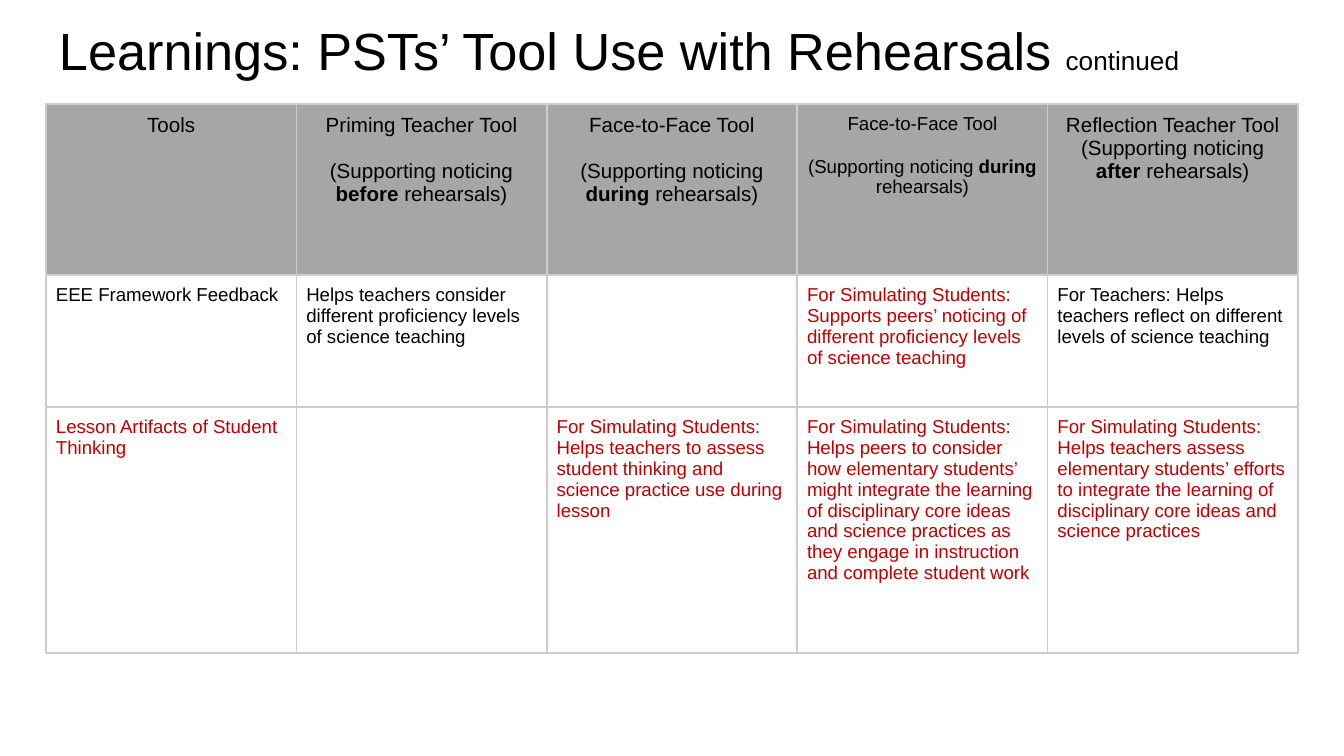
from dataclasses import dataclass

from lxml.etree import SubElement
from pptx import Presentation
from pptx.dml.color import RGBColor
from pptx.enum.text import MSO_ANCHOR, MSO_AUTO_SIZE, PP_ALIGN
from pptx.oxml.ns import qn
from pptx.util import Pt

SCALE = 914400 / 134.4
BLACK = RGBColor(0x00, 0x00, 0x00)
RED = RGBColor(0xC0, 0x00, 0x00)
GRAY = RGBColor(0xA6, 0xA6, 0xA6)
RULE = RGBColor(0xCC, 0xCC, 0xCC)
FONT = "Arial"
LEFT, WIDTH = 46, 1252
ROWS = (171, 132, 246)
PAD = 10


@dataclass
class Head:
    label: str
    when: str = ""
    size: int = 11
    gap: bool = True


@dataclass
class Note:
    text: str = ""
    color: RGBColor = RED


HEADS = [
    Head("Tools"),
    Head("Priming Teacher Tool", "before"),
    Head("Face-to-Face Tool", "during"),
    Head("Face-to-Face Tool", "during", size=10),
    Head("Reflection Teacher Tool", "after", gap=False),
]
NOTES = [
    [
        Note("EEE Framework Feedback", BLACK),
        Note("Helps teachers consider different proficiency levels of science teaching", BLACK),
        Note(),
        Note("For Simulating Students: Supports peers’ noticing of different "
             "proficiency levels of science teaching"),
        Note("For Teachers: Helps teachers reflect on different levels of science teaching", BLACK),
    ],
    [
        Note("Lesson Artifacts of Student Thinking"),
        Note(),
        Note("For Simulating Students: Helps teachers to assess student thinking "
             "and science practice use during lesson"),
        Note("For Simulating Students: Helps peers to consider how elementary students’ "
             "might integrate the learning of disciplinary core ideas and science practices "
             "as they engage in instruction and complete student work"),
        Note("For Simulating Students: Helps teachers assess elementary students’ efforts "
             "to integrate the learning of disciplinary core ideas and science practices"),
    ],
]


def px(n: int) -> int:
    return round(n * SCALE)


def style(para, size: int, color: RGBColor = BLACK, align=PP_ALIGN.LEFT) -> None:
    para.alignment = align
    para.font.name = FONT
    para.font.size = Pt(size)
    para.font.color.rgb = color


def frame(cell) -> None:
    """Set the cell's margins and its four border lines."""
    cell.margin_left = cell.margin_right = px(PAD)
    cell.margin_top = cell.margin_bottom = px(PAD)
    cell.vertical_anchor = MSO_ANCHOR.TOP
    props = cell._tc.get_or_add_tcPr()
    for side in ("lnL", "lnR", "lnT", "lnB"):
        line = SubElement(props, qn(f"a:{side}"), w=str(Pt(1)))
        fill = SubElement(line, qn("a:solidFill"))
        SubElement(fill, qn("a:srgbClr"), val=str(RULE))


def draw_head(cell, head: Head) -> None:
    frame(cell)
    cell.fill.solid()
    cell.fill.fore_color.rgb = GRAY
    label = cell.text_frame.paragraphs[0]
    label.text = head.label
    style(label, head.size, align=PP_ALIGN.CENTER)
    if not head.when:
        return
    para = cell.text_frame.add_paragraph()
    style(para, head.size, align=PP_ALIGN.CENTER)
    if head.gap:
        para.space_before = Pt(head.size * 1.15)
    for text, bold in (("(Supporting noticing ", False), (head.when, True), (" rehearsals)", False)):
        run = para.add_run()
        run.text = text
        run.font.bold = bold


def draw_note(cell, note: Note) -> None:
    frame(cell)
    cell.fill.background()
    para = cell.text_frame.paragraphs[0]
    para.text = note.text
    style(para, 10, note.color)


def draw_title(title) -> None:
    title.left, title.top, title.width, title.height = px(LEFT), 0, px(WIDTH), px(85)
    text = title.text_frame
    text.word_wrap = True
    text.auto_size = MSO_AUTO_SIZE.NONE
    text.vertical_anchor = MSO_ANCHOR.TOP
    text.margin_left = text.margin_right = px(13)
    text.margin_top, text.margin_bottom = px(18), 0
    para = text.paragraphs[0]
    style(para, 28)
    para.add_run().text = "Learnings: PSTs’ Tool Use with Rehearsals "
    more = para.add_run()
    more.text = "continued"
    more.font.size = Pt(14)


def draw_table(slide) -> None:
    shape = slide.shapes.add_table(
        len(ROWS), len(HEADS), px(LEFT), px(104), px(WIDTH), px(sum(ROWS)))
    table = shape.table
    table.first_row = table.horz_banding = False
    for row, height in zip(table.rows, ROWS):
        row.height = px(height)
    for col, head in enumerate(HEADS):
        draw_head(table.cell(0, col), head)
    for row, notes in enumerate(NOTES, 1):
        for col, note in enumerate(notes):
            draw_note(table.cell(row, col), note)


def main() -> None:
    deck = Presentation()
    deck.slide_width, deck.slide_height = px(1344), px(756)
    slide = deck.slides.add_slide(deck.slide_layouts[5])
    draw_title(slide.shapes.title)
    draw_table(slide)
    deck.save("out.pptx")


if __name__ == "__main__":
    main()
